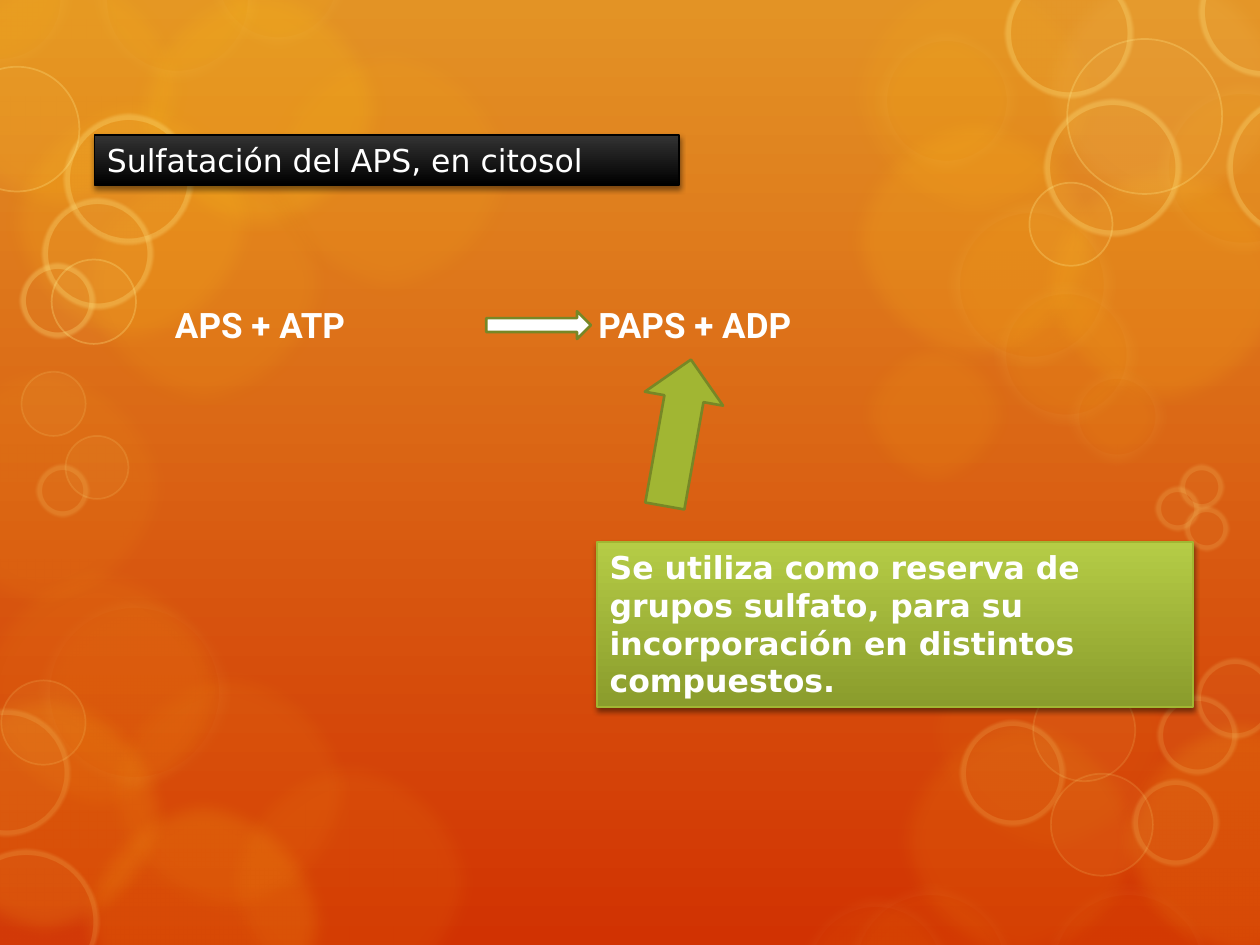
"""Build the slide on APS sulfation in the cytosol."""
from lxml import etree
from pptx import Presentation
from pptx.dml.color import RGBColor
from pptx.enum.shapes import MSO_SHAPE
from pptx.enum.text import MSO_ANCHOR, MSO_AUTO_SIZE, PP_ALIGN
from pptx.oxml.ns import qn
from pptx.util import Cm, Pt

OVAL, RECT, ARROW = MSO_SHAPE.OVAL, MSO_SHAPE.RECTANGLE, MSO_SHAPE.RIGHT_ARROW
TOP, LEFT, GROW = MSO_ANCHOR.TOP, PP_ALIGN.LEFT, MSO_AUTO_SIZE.SHAPE_TO_FIT_TEXT

THEME = {
    "backdrop": ("E39325", "D13202"),
    "black": ("333333", "000000"),
    "green": ("B5CC46", "8A9C2C"),
    "white": "FFFFFF",
    "black_line": "000000",
    "arrow": "A1B633",
    "arrow_line": "778726",
    "gold": "FDC61B",
    "cream": "FEEBAE",
    "yellow": "FFE281",
    "body": {"name": "DejaVu Sans", "size": Pt(18), "bold": False},
    "strong": {"name": "DejaVu Sans", "size": Pt(18), "bold": True},
    "formula": {"name": "Roboto", "size": Pt(20), "bold": True},
}

PANELS = [
    ((0.75, 1.07, 4.64, 0.4), "black", "black_line", "body",
     "Sulfatación del APS, en citosol"),
    ((4.74, 4.3, 4.73, 1.31), "green", "arrow", "strong",
     "Se utiliza como reserva de grupos sulfato, para su incorporación "
     "en distintos compuestos."),
]
REACTION = ((1.29, 2.36, 5.81, 0.44), "APS + ATP\tPAPS + ADP", 3.36)
ARROWS = [((3.86, 2.47, 0.83, 0.22), 0, "white"),
          ((4.79, 3.12, 1.18, 0.63), 280.1, "arrow")]

BIG = 2.09
GLOWS = [
    ("gold", 8, [(-0.26, 4.42, BIG), (0.77, 5.24, BIG), (1.73, 5.96, BIG),
                 (-0.7, 2.82, BIG)]),
    ("gold", 10, [(0.57, 1.2, BIG), (2.05, 0.31, BIG), (6.69, -0.29, BIG),
                  (7.06, 5.62, BIG), (6.75, 2.62, 1.33)]),
    ("gold", 16, [(0.57, 6.27, BIG), (8.81, 5.62, BIG), (-0.69, 5.41, BIG)]),
    ("gold", 14, [(-0.56, -0.33, BIG)]),
    ("gold", 20, [(1.01, -0.18, BIG)]),
    ("gold", 15, [(0, 0.72, BIG), (8.2, 1.2, BIG), (6.69, 0.86, BIG)]),
    ("gold", 5, [(7.29, 4.77, BIG)]),
    ("yellow", 10, [(8.2, -0.33, BIG)]),
]
HALOS = [
    (10, 6, [(9.18, 0.65, 1.37), (6.94, 0.23, 1.14), (7.52, 1.59, 1.33),
             (7.89, 2.24, 1.14), (8.47, 2.91, 0.79), (0.75, -0.66, 1.31),
             (1.64, -0.74, 1.13), (-0.57, -0.58, 1.14)]),
    (6, 4, [(0.3, 4.73, 1.53), (6.33, 7.1, 1.24), (6.7, 7.01, 1.37),
            (8.27, 7.01, 1.37)]),
]
RINGS = [
    (1, 15, [(0.01, 5.4, 0.67), (8.34, 6.14, 0.81), (8.2, 5.39, 0.81),
             (0.17, 2.95, 0.51), (0.52, 3.46, 0.5)]),
    (1, 30, [(-0.36, 0.53, 0.99), (0.41, 2.06, 0.67), (8.47, 0.31, 1.23),
             (8.17, 1.45, 0.66)]),
    (5, 15, [(-0.36, 6.75, 1.13), (-0.44, 5.64, 0.98), (7.63, 5.73, 0.81),
             (9, 6.2, 0.66), (8.83, 4.48, 0.61), (9.2, 5.53, 0.61),
             (9.5, 5.24, 0.61), (9.37, 3.7, 0.33), (9.18, 3.87, 0.33),
             (9.41, 4.03, 0.33), (0.3, 3.7, 0.39)]),
    (5, 30, [(0.52, 0.92, 1), (0.35, 1.59, 0.85), (0.17, 2.1, 0.57),
             (7.99, -0.23, 0.99), (9.53, -0.4, 1), (9.75, 0.76, 1.12),
             (8.3, 0.8, 1.06)]),
]
SOFT_EDGE, FAINT_EDGE = Cm(0.35), Cm(0.05)


def cm(inches):
    return Cm(inches * 2.54)


def rgb(name):
    return RGBColor.from_string(THEME[name])


def add_effect(sp, tag, **attrs):
    effects = sp._element.spPr.find(qn("a:effectLst"))
    return etree.SubElement(effects, qn(tag), {k: str(v) for k, v in attrs.items()})


def set_gradient(fill, colors):
    fill.gradient()
    fill.gradient_angle = 270
    for i, (stop, color) in enumerate(zip(fill.gradient_stops, colors)):
        stop.position = i
        stop.color.rgb = RGBColor.from_string(color)


def set_line(sp, color, width):
    sp.line.color.rgb = rgb(color)
    sp.line.width = Pt(width)


def add_solid(s, kind, box, color):
    sp = s.shapes.add_shape(kind, *map(cm, box))
    sp.shadow.inherit = False
    sp.fill.solid()
    sp.fill.fore_color.rgb = rgb(color)
    return sp


def add_bubbles(s, master, circles, color, alphas, line=None, edge=None):
    tree = master.shapes._spTree
    for left, top, size in circles:
        sp = add_solid(s, OVAL, (left, top, size, size), color)
        if line:
            set_line(sp, *line)
        else:
            sp.line.fill.background()
        colors = sp._element.spPr.findall(".//" + qn("a:srgbClr"))
        for clr, alpha in zip(colors, alphas):
            etree.SubElement(clr, qn("a:alpha"), val=str(alpha * 1000))
        if edge:
            add_effect(sp, "a:softEdge", rad=int(edge))
        sp._element.nvSpPr.cNvPr.set("id", str(100 + len(tree)))
        tree.append(sp._element)


def add_text(sp, text, style, tab=None):
    tf = sp.text_frame
    for key, value in {"word_wrap": True, "auto_size": GROW,
                       "vertical_anchor": TOP}.items():
        setattr(tf, key, value)
    p = tf.paragraphs[0]
    p.alignment = LEFT
    if tab:
        tabs = etree.SubElement(p._p.get_or_add_pPr(), qn("a:tabLst"))
        etree.SubElement(tabs, qn("a:tab"), pos=str(int(cm(tab))), algn="l")
    r = p.add_run()
    r.text = text
    for key, value in THEME[style].items():
        setattr(r.font, key, value)
    r.font.color.rgb = rgb("white")


def add_panel(s, box, colors, line, style, text):
    sp = s.shapes.add_shape(RECT, *map(cm, box))
    sp.shadow.inherit = False
    set_gradient(sp.fill, THEME[colors])
    set_line(sp, line, 1)
    shadow = add_effect(sp, "a:outerShdw", blurRad=int(Pt(3)), dist=int(Pt(2)),
                        dir=5400000, rotWithShape=0)
    clr = etree.SubElement(shadow, qn("a:srgbClr"), val="000000")
    etree.SubElement(clr, qn("a:alpha"), val="45000")
    add_text(sp, text, style)


def main():
    prs = Presentation()
    prs.slide_width, prs.slide_height = Cm(25.4), Cm(19.05)
    s = prs.slides.add_slide(prs.slide_layouts[6])
    master = prs.slide_master
    set_gradient(s.background.fill, THEME["backdrop"])
    for color, alpha, circles in GLOWS:
        add_bubbles(s, master, circles, color, [alpha], edge=SOFT_EDGE)
    for alpha, line_alpha, circles in HALOS:
        add_bubbles(s, master, circles, "gold", [alpha, line_alpha],
                    ("cream", 14), SOFT_EDGE)
    for width, line_alpha, circles in RINGS:
        add_bubbles(s, master, circles, "yellow", [5, line_alpha],
                    ("yellow", width), FAINT_EDGE if width > 1 else None)
    add_panel(s, *PANELS[0])
    box, text, tab = REACTION
    add_text(s.shapes.add_textbox(*map(cm, box)), text, "formula", tab)
    for box, rotation, color in ARROWS:
        sp = add_solid(s, ARROW, box, color)
        sp.rotation = rotation
        set_line(sp, "arrow_line", 1.5)
    add_panel(s, *PANELS[1])
    prs.save("out.pptx")


if __name__ == "__main__":
    main()
